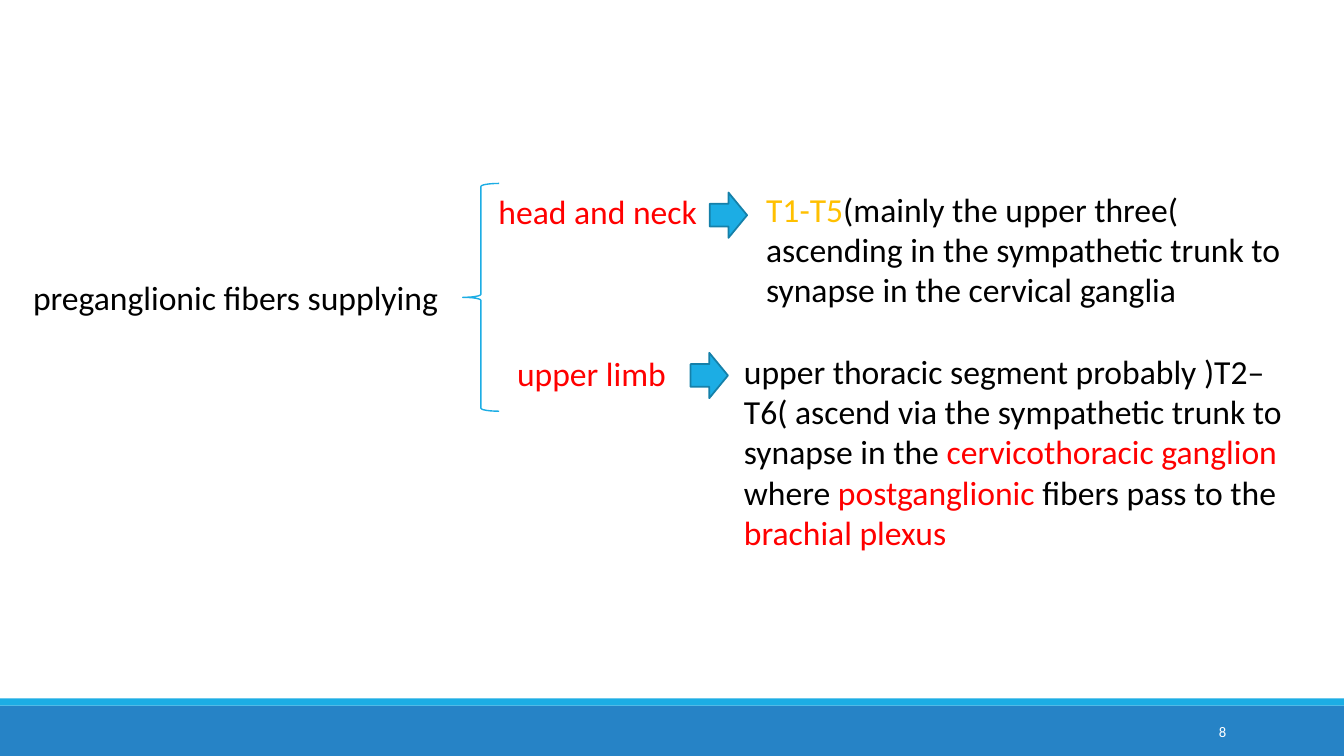
import dataclasses

import pptx
import pptx.dml.color
import pptx.enum.shapes
import pptx.enum.text
import pptx.util

Inches = pptx.util.Inches
Pt = pptx.util.Pt
RGBColor = pptx.dml.color.RGBColor
MSO_SHAPE = pptx.enum.shapes.MSO_SHAPE
PP_ALIGN = pptx.enum.text.PP_ALIGN
MSO_ANCHOR = pptx.enum.text.MSO_ANCHOR

BLACK = RGBColor(0x00, 0x00, 0x00)
WHITE = RGBColor(0xFF, 0xFF, 0xFF)
RED = RGBColor(0xFF, 0x00, 0x00)
AMBER = RGBColor(0xFF, 0xC0, 0x00)
BLUE = RGBColor(0x26, 0x83, 0xC6)
CYAN = RGBColor(0x1C, 0xAD, 0xE4)
TEAL = RGBColor(0x15, 0x80, 0xA9)
FONT = "Calibri"


@dataclasses.dataclass(frozen=True)
class Box:
    left: float
    top: float
    width: float
    height: float

    def emu(self) -> list[int]:
        return [Inches(v) for v in dataclasses.astuple(self)]


@dataclasses.dataclass(frozen=True)
class Run:
    text: str
    color: RGBColor = BLACK


@dataclasses.dataclass(frozen=True)
class Label:
    box: Box
    paragraphs: list[list[Run]]
    size: float = 24
    align: PP_ALIGN = PP_ALIGN.LEFT
    anchor: MSO_ANCHOR = MSO_ANCHOR.TOP


@dataclasses.dataclass(frozen=True)
class Figure:
    kind: MSO_SHAPE
    box: Box
    fill: RGBColor | None = None
    line: RGBColor | None = None
    weight: float = 1


def arrow(left: float, top: float) -> Figure:
    return Figure(MSO_SHAPE.RIGHT_ARROW, Box(left, top, 0.37, 0.45), CYAN, TEAL, 1.25)


FIGURES = [
    Figure(MSO_SHAPE.RECTANGLE, Box(0, 7, 13.33, 0.5), BLUE),
    Figure(MSO_SHAPE.RECTANGLE, Box(0, 6.93, 13.33, 0.07), CYAN),
    arrow(7.04, 1.91),
    arrow(6.85, 3.5),
    Figure(MSO_SHAPE.LEFT_BRACE, Box(4.59, 1.82, 0.36, 2.26), line=CYAN),
]

LABELS = [
    Label(Box(0.23, 2.7, 4.26, 0.5), [[Run("preganglionic fibers supplying")]]),
    Label(Box(4.77, 1.84, 2.73, 0.5), [[Run(" head and neck", RED)]]),
    Label(Box(5.03, 3.45, 1.77, 0.5), [[Run("upper limb", RED)]]),
    Label(Box(7.5, 1.82, 5.48, 1.31), [
        [Run("T1-T5", AMBER), Run("(mainly the upper three(")],
        [Run("ascending in the sympathetic trunk to synapse in the cervical ganglia")],
    ]),
    Label(Box(7.28, 3.43, 6.05, 2.12), [
        [Run("upper thoracic segment probably )T2–T6( ascend via the "
             "sympathetic trunk to synapse in the "),
         Run("cervicothoracic ganglion", RED)],
        [Run("where "), Run("postganglionic", RED),
         Run(" fibers pass to the "), Run("brachial plexus", RED)],
    ]),
    Label(Box(10.83, 7.06, 1.43, 0.4), [[Run("8", WHITE)]], 10.5,
          PP_ALIGN.RIGHT, MSO_ANCHOR.MIDDLE),
]


def draw_figure(s: pptx.slide.Slide, figure: Figure) -> None:
    sp = s.shapes.add_shape(figure.kind, *figure.box.emu())
    sp.shadow.inherit = False
    if figure.fill is None:
        sp.fill.background()
    else:
        sp.fill.solid()
        sp.fill.fore_color.rgb = figure.fill
    if figure.line is None:
        sp.line.fill.background()
    else:
        sp.line.color.rgb = figure.line
        sp.line.width = Pt(figure.weight)


def draw_label(s: pptx.slide.Slide, label: Label) -> None:
    tf = s.shapes.add_textbox(*label.box.emu()).text_frame
    tf.word_wrap = True
    tf.vertical_anchor = label.anchor
    for i, runs in enumerate(label.paragraphs):
        p = tf.add_paragraph() if i else tf.paragraphs[0]
        p.alignment = label.align
        for run in runs:
            r = p.add_run()
            r.text = run.text
            r.font.name = FONT
            r.font.size = Pt(label.size)
            r.font.color.rgb = run.color


def main() -> None:
    prs = pptx.Presentation()
    prs.slide_width = Inches(13.33)
    prs.slide_height = Inches(7.5)
    s = prs.slides.add_slide(prs.slide_layouts[6])
    for figure in FIGURES:
        draw_figure(s, figure)
    for label in LABELS:
        draw_label(s, label)
    prs.save("out.pptx")


if __name__ == "__main__":
    main()
